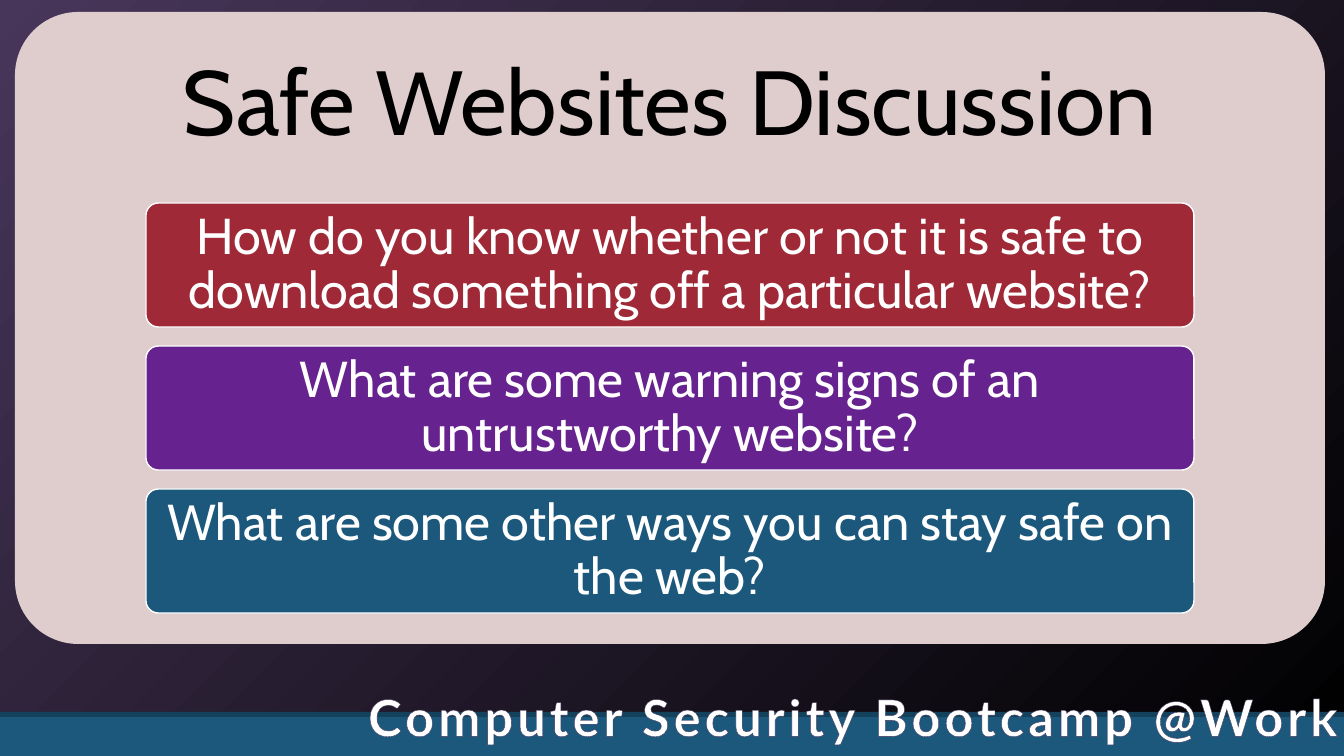
import pptx
import pptx.util
import pptx.dml.color
import pptx.enum.shapes
import pptx.enum.text
from dataclasses import dataclass
from lxml import etree

ALIGN = pptx.enum.text.PP_ALIGN
ANCHOR = pptx.enum.text.MSO_ANCHOR
SHAPE = pptx.enum.shapes.MSO_SHAPE
SLIDE_W, SLIDE_H = 1344, 756
EMU_PER_PX = 12192000 / SLIDE_W


@dataclass(frozen=True)
class Theme:
    purple: str = "48365A"
    black: str = "000000"
    white: str = "FFFFFF"
    panel: str = "DFCDCE"
    band: str = "1B587C"
    band_edge: str = "14425D"
    questions: tuple = ("9F2936", "66228E", "1B587C")
    body_font: str = "Cabin"
    footer_font: str = "Lato"
    title_size: int = 65
    body_size: int = 36
    footer_size: int = 36


THEME = Theme()

QUESTIONS = (
    "How do you know whether or not it is safe to download something off a particular website?",
    "What are some warning signs of an untrustworthy website?",
    "What are some other ways you can stay safe on the web?",
)


def px(n):
    return pptx.util.Emu(round(n * EMU_PER_PX))


def rgb(color):
    return pptx.dml.color.RGBColor.from_string(color)


def set_background(s):
    fill = s.background.fill
    fill.gradient()
    fill.gradient_angle = 315
    for stop, color in zip(fill.gradient_stops, (THEME.purple, THEME.black)):
        stop.color.rgb = rgb(color)


def add_block(s, kind, box, color, line=None):
    sp = s.shapes.add_shape(kind, *map(px, box))
    sp.shadow.inherit = False
    sp.fill.solid()
    sp.fill.fore_color.rgb = rgb(color)
    if line:
        sp.line.color.rgb = rgb(line)
        sp.line.width = pptx.util.Pt(1)
    else:
        sp.line.fill.background()
    if kind == SHAPE.ROUNDED_RECTANGLE:
        sp.adjustments[0] = 0.1
    return sp


def set_text(sp, text, size, color, font, align=ALIGN.CENTER,
             anchor=ANCHOR.MIDDLE, inset=(10, 7), spacing=0.9):
    """Fill a shape with one paragraph; inset is (horizontal, vertical) in px."""
    tf = sp.text_frame
    tf.word_wrap = True
    tf.vertical_anchor = anchor
    tf.margin_left = tf.margin_right = px(inset[0])
    tf.margin_top = tf.margin_bottom = px(inset[1])
    p = tf.paragraphs[0]
    p.alignment = align
    p.line_spacing = spacing
    r = p.add_run()
    r.text = text
    p.font.size = pptx.util.Pt(size)
    p.font.name = font
    p.font.color.rgb = rgb(color)
    return p


def outline_text(p, color, width, letter_spacing):
    """Outline and track out a paragraph's runs; lengths are in points."""
    ns = pptx.oxml.ns.qn
    for r in p.runs:
        r.font.color.rgb = p.font.color.rgb
        props = r.font._element
        props.set("spc", str(round(letter_spacing * 100)))
        ln = etree.Element(ns("a:ln"), w=str(pptx.util.Pt(width)))
        fill = etree.SubElement(ln, ns("a:solidFill"))
        etree.SubElement(fill, ns("a:srgbClr"), val=color)
        props.insert(0, ln)


def add_footer(s):
    add_block(s, SHAPE.RECTANGLE, (0, 714, SLIDE_W, 42), THEME.band)
    add_block(s, SHAPE.RECTANGLE, (0, 712, SLIDE_W, 5), THEME.band_edge)
    sp = s.shapes.add_textbox(px(325), px(681), px(1024), px(72))
    p = set_text(sp, "Computer Security Bootcamp @Work", THEME.footer_size,
                 THEME.white, THEME.footer_font, ALIGN.RIGHT, ANCHOR.TOP,
                 (10, 5), 1.0)
    p.font.bold = True
    outline_text(p, THEME.purple, 0.75, 3)


def add_title_panel(s):
    left, top, width = 15, 12, 1310
    add_block(s, SHAPE.ROUNDED_RECTANGLE, (left, top, width, 632), THEME.panel)
    sp = s.shapes.add_textbox(*map(px, (left, top, width, 189)))
    set_text(sp, "Safe Websites Discussion", THEME.title_size, THEME.black,
             THEME.body_font, inset=(27, 27))


def add_questions(s):
    top, pitch = 203, 143
    for i, (text, color) in enumerate(zip(QUESTIONS, THEME.questions)):
        sp = add_block(s, SHAPE.ROUNDED_RECTANGLE,
                       (146, top + i * pitch, 1048, 124), color, THEME.white)
        set_text(sp, text, THEME.body_size, THEME.white, THEME.body_font)


def main():
    prs = pptx.Presentation()
    prs.slide_width, prs.slide_height = px(SLIDE_W), px(SLIDE_H)
    s = prs.slides.add_slide(prs.slide_layouts[6])
    set_background(s)
    add_footer(s)
    add_title_panel(s)
    add_questions(s)
    prs.save("out.pptx")


if __name__ == "__main__":
    main()
